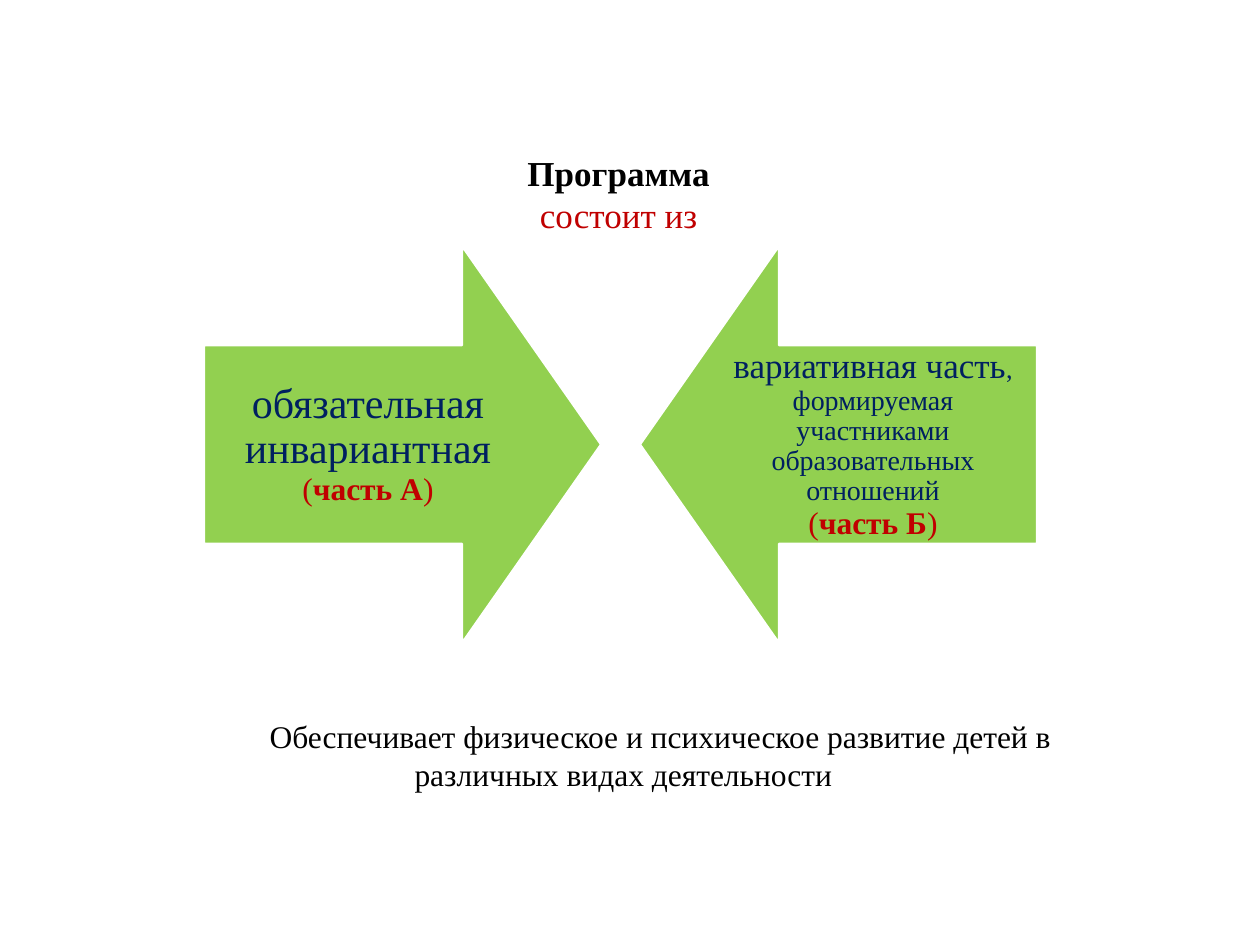
import pptx
import pptx.dml.color
import pptx.enum.shapes
import pptx.enum.text
import pptx.util

PX = 914400 / 126
FONT = "Times New Roman"
BLACK, NAVY, RED, GREEN, WHITE = "000000", "002060", "C00000", "92D050", "FFFFFF"
SHAPE = pptx.enum.shapes.MSO_SHAPE
ANCHOR = pptx.enum.text.MSO_ANCHOR
CENTER = pptx.enum.text.PP_ALIGN.CENTER


def px(length):
    return pptx.util.Emu(round(length * PX))


def colour(hex_string):
    return pptx.dml.color.RGBColor.from_string(hex_string)


def format_span(span, size, hex_string, bold=False):
    span.font.name = FONT
    span.font.size = pptx.util.Pt(size)
    span.font.bold = bold
    span.font.color.rgb = colour(hex_string)


def add_spans(para, spans):
    para.alignment = CENTER
    for text, *style in spans:
        span = para.add_run()
        span.text = text
        format_span(span, *style)


def add_title(page, bounds, lines):
    title = page.shapes.title
    title.left, title.top, title.width, title.height = map(px, bounds)
    frame = title.text_frame
    frame.text = "\n".join(text for text, *style in lines)
    frame.word_wrap = False
    frame.auto_size = pptx.enum.text.MSO_AUTO_SIZE.NONE
    frame.vertical_anchor = ANCHOR.TOP
    for para, (text, *style) in zip(frame.paragraphs, lines):
        para.alignment = CENTER
        format_span(para.runs[0], *style)


def add_text_box(page, bounds):
    box = page.shapes.add_textbox(*map(px, bounds))
    box.text_frame.word_wrap = True
    return box.text_frame


def add_arrow(page, kind, left):
    arrow = page.shapes.add_shape(kind, px(left), px(246), px(397), px(397))
    arrow.shadow.inherit = False
    arrow.adjustments[0] = 0.5
    arrow.adjustments[1] = 0.35
    arrow.fill.solid()
    arrow.fill.fore_color.rgb = colour(GREEN)
    arrow.line.color.rgb = colour(WHITE)
    arrow.line.width = pptx.util.Pt(1.25)


def add_part(page, left, inset, description, letter):
    frame = add_text_box(page, (left, 345, 328, 199))
    frame.vertical_anchor = ANCHOR.MIDDLE
    frame.margin_left = frame.margin_right = px(inset)
    frame.margin_top = frame.margin_bottom = px(inset)
    para = frame.paragraphs[0]
    para.line_spacing = 0.9
    add_spans(para, description)
    para.add_line_break()
    add_spans(para, [("(", 18, RED), (f"часть {letter}", 18, RED, True), (")", 18, RED)])


def add_summary(page, bounds, text):
    para = add_text_box(page, bounds).paragraphs[0]
    add_spans(para, [(text, 18, BLACK)])
    para._p.get_or_add_pPr().set("indent", str(px(74)))


def main():
    deck = pptx.Presentation()
    deck.slide_width, deck.slide_height = px(1260), px(945)
    page = deck.slides.add_slide(deck.slide_layouts[5])
    add_title(page, (514, 145, 218, 97),
              [("Программа ", 20, BLACK, True), ("состоит из ", 20, RED)])
    add_arrow(page, SHAPE.RIGHT_ARROW, 204)
    add_part(page, 204, 24, [("обязательная инвариантная", 24, NAVY)], "А")
    add_arrow(page, SHAPE.LEFT_ARROW, 640)
    add_part(page, 709, 20, [
        ("вариативная часть", 20, NAVY),
        (", ", 15, NAVY),
        ("формируемая участниками образовательных отношений", 16, NAVY),
    ], "Б")
    add_summary(page, (147, 711, 953, 89),
                "Обеспечивает физическое и психическое развитие детей "
                "в различных видах деятельности")
    deck.save("out.pptx")


if __name__ == "__main__":
    main()
